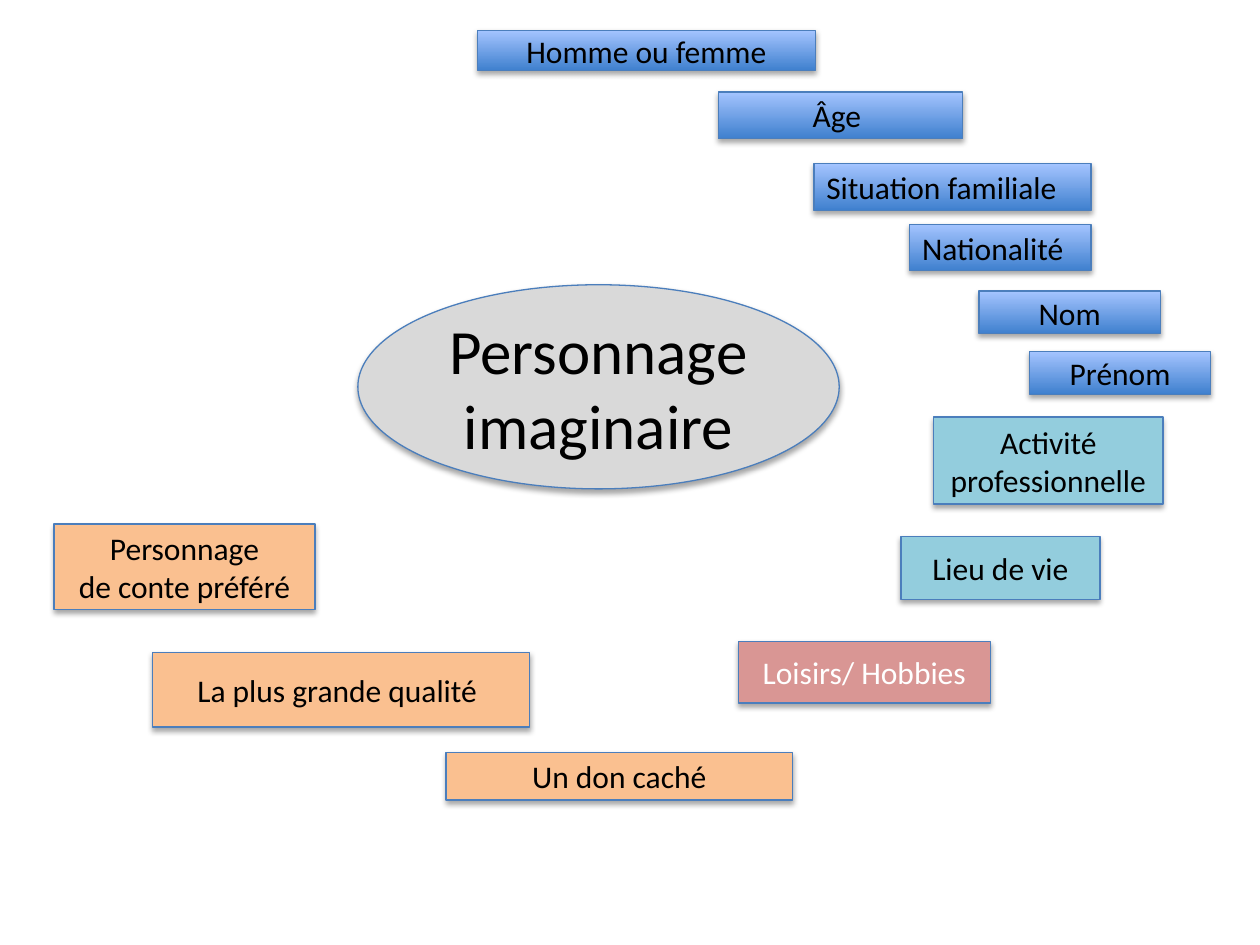
"""Build a mind map of the traits of an imaginary character."""
from lxml.etree import SubElement
from pptx import Presentation
from pptx.dml.color import RGBColor
from pptx.enum.shapes import MSO_SHAPE as Shape
from pptx.enum.text import MSO_ANCHOR as Anchor, PP_ALIGN as Align
from pptx.oxml.ns import qn
from pptx.util import Inches, Pt

BLACK = RGBColor(0x00, 0x00, 0x00)
WHITE = RGBColor(0xFF, 0xFF, 0xFF)
OUTLINE = RGBColor(0x4B, 0x7E, 0xBC)
DARK_BLUE = RGBColor(0x3F, 0x80, 0xCE)
LIGHT_BLUE = RGBColor(0xA4, 0xC4, 0xFF)
TEAL = RGBColor(0x93, 0xCD, 0xDD)
ROSE = RGBColor(0xD9, 0x96, 0x94)
ORANGE = RGBColor(0xFA, 0xC0, 0x90)
GREY = RGBColor(0xD9, 0xD9, 0xD9)

IDENTITY = [
    ("Homme ou femme", (3.79, 0.24, 2.68, 0.32), Align.CENTER),
    ("Âge ", (5.7, 0.73, 1.94, 0.37), Align.CENTER),
    ("Situation familiale", (6.46, 1.3, 2.2, 0.37), Align.LEFT),
    ("Nationalité", (7.22, 1.78, 1.44, 0.37), Align.LEFT),
    ("Nom", (7.77, 2.31, 1.44, 0.34), Align.CENTER),
    ("Prénom", (8.17, 2.79, 1.44, 0.34), Align.CENTER),
]
TRAITS = [
    ("Loisirs/ Hobbies", (5.86, 5.09, 2, 0.49), ROSE, WHITE),
    ("La plus grande qualité ", (1.21, 5.18, 2.99, 0.59), ORANGE, BLACK),
    ("Activité professionnelle", (7.41, 3.31, 1.82, 0.69), TEAL, BLACK),
    ("Lieu de vie", (7.15, 4.26, 1.58, 0.5), TEAL, BLACK),
    ("Personnage\nde conte préféré", (0.43, 4.16, 2.07, 0.68), ORANGE, BLACK),
    ("Un don caché", (3.54, 5.97, 2.75, 0.38), ORANGE, BLACK),
]


def write_text(box, text, size=18, color=BLACK, align=Align.CENTER):
    """Write each line of text as one paragraph of the box."""
    frame = box.text_frame
    frame.word_wrap = True
    frame.vertical_anchor = Anchor.MIDDLE
    frame.text = text
    for para in frame.paragraphs:
        para.alignment = align
        font = para.runs[0].font
        font.name = "Calibri"
        font.size = Pt(size)
        font.color.rgb = color


def add_shadow(box):
    """Give the box a soft shadow straight below it."""
    box.shadow.inherit = False
    effects = box.element.spPr.find(qn("a:effectLst"))
    shadow = SubElement(effects, qn("a:outerShdw"), blurRad=str(Pt(3.1)),
                        dist=str(Pt(1.8)), dir="5400000", rotWithShape="0")
    color = SubElement(shadow, qn("a:srgbClr"), val=str(BLACK))
    SubElement(color, qn("a:alpha"), val="35000")


def fill_gradient(box):
    """Fill the box with blue that lightens towards the top."""
    box.fill.gradient()
    box.fill.gradient_angle = 90
    for stop, color in zip(box.fill.gradient_stops, (DARK_BLUE, LIGHT_BLUE)):
        stop.color.rgb = color


def add_box(page, text, place, fill=None, kind=Shape.RECTANGLE, **text_format):
    """Add an outlined shape with text, in the blue gradient if no fill is given."""
    box = page.shapes.add_shape(kind, *map(Inches, place))
    if fill is None:
        fill_gradient(box)
    else:
        box.fill.solid()
        box.fill.fore_color.rgb = fill
    box.line.color.rgb = OUTLINE
    box.line.width = Pt(0.75)
    add_shadow(box)
    write_text(box, text, **text_format)


def main():
    """Build the slide and save the deck."""
    deck = Presentation()
    deck.slide_width = Inches(10)
    deck.slide_height = Inches(7.5)
    page = deck.slides.add_slide(deck.slide_layouts[6])
    for text, place, align in IDENTITY:
        add_box(page, text, place, align=align)
    for text, place, fill, color in TRAITS:
        add_box(page, text, place, fill, color=color)
    add_box(page, "Personnage\nimaginaire", (2.84, 2.26, 3.82, 1.62), GREY,
            kind=Shape.OVAL, size=36)
    deck.save("out.pptx")


if __name__ == "__main__":
    main()
